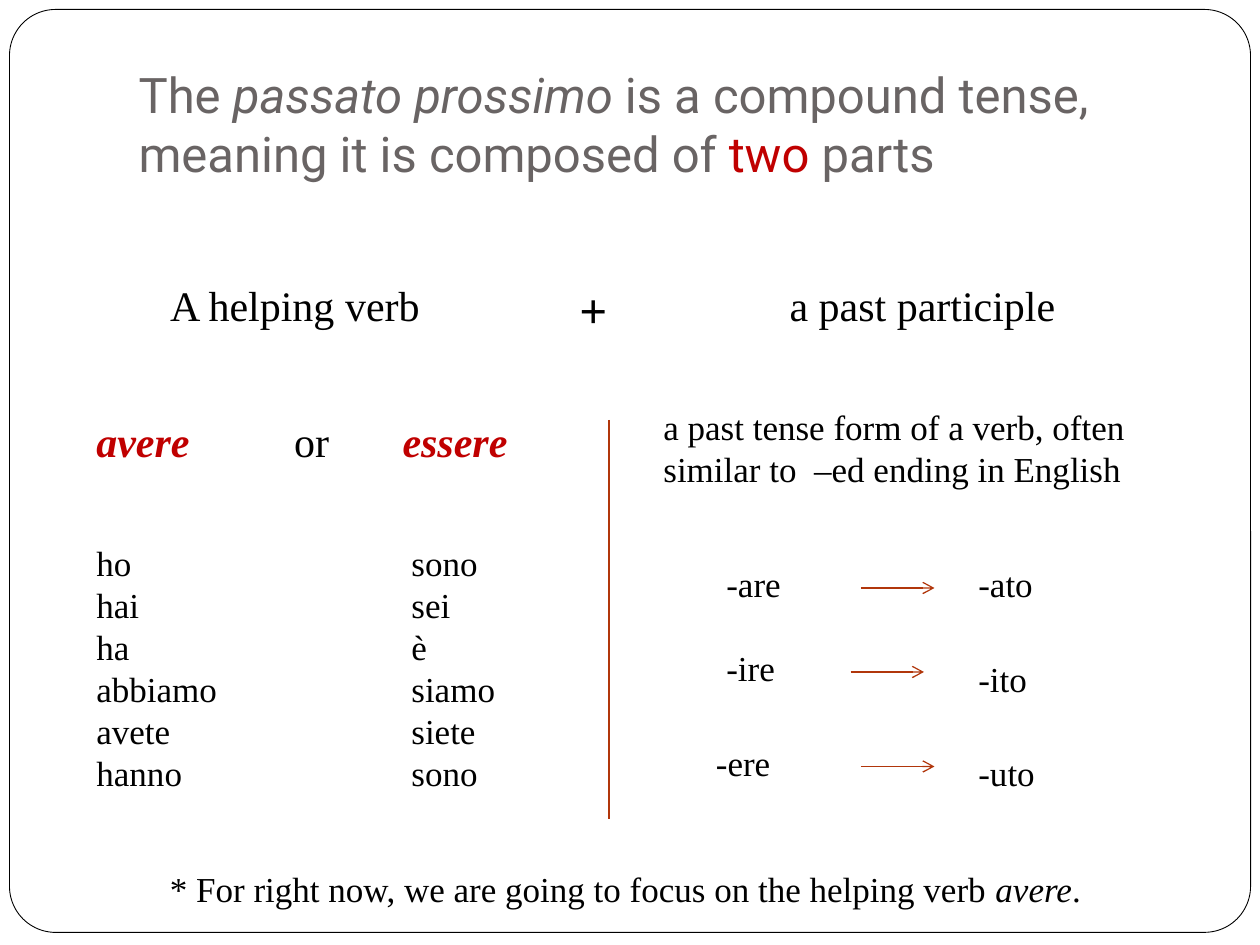
from typing import NamedTuple

from lxml import etree
from pptx import Presentation
from pptx.dml.color import RGBColor
from pptx.enum.shapes import MSO_CONNECTOR, MSO_SHAPE
from pptx.enum.text import MSO_ANCHOR, MSO_AUTO_SIZE, PP_ALIGN
from pptx.oxml.ns import qn
from pptx.util import Inches, Pt

STRAIGHT = MSO_CONNECTOR.STRAIGHT
ROUNDED = MSO_SHAPE.ROUNDED_RECTANGLE
TOP, BOTTOM = MSO_ANCHOR.TOP, MSO_ANCHOR.BOTTOM
GROW, FIXED = MSO_AUTO_SIZE.SHAPE_TO_FIT_TEXT, MSO_AUTO_SIZE.NONE
LEFT = PP_ALIGN.LEFT

WIDTH, HEIGHT = Inches(10), Inches(7.5)
COLS, ROWS = 120, 90
SERIF, SANS = "Times New Roman", "Roboto"
BLACK, WHITE, GREY, RED, RUST = "000000", "FFFFFF", "696464", "C00000", "B1360B"


class Run(NamedTuple):
    text: str
    color: str | None = None
    bold: bool | None = None
    italic: bool | None = None


class Box(NamedTuple):
    col: float
    row: float
    cols: float
    rows: float


class Style(NamedTuple):
    size: float = 20
    font: str = SERIF
    color: str = BLACK


class Ending(NamedTuple):
    infinitive: str
    participle: str
    left: Box
    right: Box
    arrow_col: float
    arrow_row: float


BODY = Style()
HEADING = Style(24)

FRAME = Box(0.9, 0.9, 118.2, 87.9)
TITLE = [Run("The "), Run("passato prossimo", italic=True),
         Run(" is a compound tense, meaning it is composed of "),
         Run("two", RED), Run(" parts")]
PARTS = [("A helping verb", Box(15, 26, 32, 8)),
         ("a past participle", Box(74, 26, 33, 8))]
VERBS = [Run("avere", RED, True, True), Run("\tor\t"),
         Run("essere", RED, True, True)]
VERB_TABS = (1.57, 2.43)
CONJUGATIONS = [
    (["ho", "hai", "ha", "abbiamo", "avete", "hanno"], Box(8, 51, 20, 25.5)),
    (["sono", "sei", "è", "siamo", "siete", "sono"], Box(38, 51, 16, 25.5)),
]
ENDINGS = [
    Ending("-are", "-ato", Box(68, 53, 12, 5.3), Box(92, 53, 12, 5.3), 82, 56),
    Ending("-ire", "-ito", Box(68, 61, 11, 5.3), Box(92, 62, 11, 5.3), 81, 64),
    Ending("-ere", "-uto", Box(67, 70, 11, 5.3), Box(92, 71, 13, 5.3), 82, 73),
]
ARROW_COLS = 7
NOTE = [Run("* For right now, we are going to focus on the helping verb "),
        Run("avere", italic=True), Run(".")]


def rgb(value: str) -> RGBColor:
    return RGBColor.from_string(value)


def x(cols: float) -> int:
    return round(WIDTH * cols / COLS)


def y(rows: float) -> int:
    return round(HEIGHT * rows / ROWS)


def place(sp, box: Box) -> None:
    sp.left, sp.top = x(box.col), y(box.row)
    sp.width, sp.height = x(box.cols), y(box.rows)


def write(tf, lines: list[list[Run]], style: Style) -> None:
    tf.word_wrap = True
    for i, runs in enumerate(lines):
        p = tf.add_paragraph() if i else tf.paragraphs[0]
        p.alignment = LEFT
        p.font.size = Pt(style.size)
        p.font.name = style.font
        p.font.color.rgb = rgb(style.color)
        for run in runs:
            r = p.add_run()
            r.text = run.text
            r.font.bold, r.font.italic = run.bold, run.italic
            if run.color:
                r.font.color.rgb = rgb(run.color)


def add_text(s, box: Box, lines: list[list[Run]], style: Style = BODY):
    sp = s.shapes.add_textbox(x(box.col), y(box.row), x(box.cols), y(box.rows))
    write(sp.text_frame, lines, style)
    sp.text_frame.auto_size = GROW
    return sp


def fill_placeholder(sp, box: Box, runs: list[Run], style: Style, anchor) -> None:
    place(sp, box)
    tf = sp.text_frame
    write(tf, [runs], style)
    tf.auto_size = FIXED
    tf.vertical_anchor = anchor


def remove_bullet(p) -> None:
    pPr = p._p.get_or_add_pPr()
    pPr.set("marL", "0")
    pPr.set("indent", "0")
    pPr.insert_element_before(etree.Element(qn("a:buNone")), "a:tabLst", "a:defRPr")


def set_tabs(p, stops: tuple[float, ...]) -> None:
    tabs = etree.Element(qn("a:tabLst"))
    for stop in stops:
        etree.SubElement(tabs, qn("a:tab"), pos=str(Inches(stop)), algn="l")
    p._p.get_or_add_pPr().insert_element_before(tabs, "a:defRPr")


def add_line(s, start: tuple[float, float], end: tuple[float, float],
             arrow: bool = False) -> None:
    line = s.shapes.add_connector(STRAIGHT, x(start[0]), y(start[1]),
                                  x(end[0]), y(end[1]))
    line.line.color.rgb = rgb(RUST)
    line.line.width = Pt(0.75)
    if arrow:
        etree.SubElement(line.line._get_or_add_ln(), qn("a:tailEnd"), type="arrow")
    etree.SubElement(line._element.spPr, qn("a:effectLst"))


def add_frame(s) -> None:
    sp = s.shapes.add_shape(ROUNDED, 0, 0, 0, 0)
    place(sp, FRAME)
    sp.adjustments[0] = 0.05
    sp.shadow.inherit = False
    sp.fill.solid()
    sp.fill.fore_color.rgb = rgb(WHITE)
    sp.line.color.rgb = rgb(BLACK)
    sp.line.width = Pt(0.5)
    s.shapes.title._element.addprevious(sp._element)


def main() -> None:
    prs = Presentation()
    prs.slide_width, prs.slide_height = WIDTH, HEIGHT
    s = prs.slides.add_slide(prs.slide_layouts[3])
    title, *bodies = s.placeholders
    add_frame(s)

    fill_placeholder(title, Box(12, 3.6, 102, 15), TITLE, Style(28, SANS, GREY), BOTTOM)
    title.text_frame.margin_bottom = Inches(0.1)
    for sp, (text, box) in zip(bodies, PARTS):
        fill_placeholder(sp, box, [Run(text)], HEADING, TOP)
        p = sp.text_frame.paragraphs[0]
        p.space_before = Pt(5.8)
        remove_bullet(p)

    add_text(s, Box(54, 26, 8, 6.8), [[Run("+", bold=True)]], Style(28))
    add_line(s, (58, 40), (58, 78))

    verbs = add_text(s, Box(8, 39, 47, 6), [VERBS], HEADING)
    set_tabs(verbs.text_frame.paragraphs[0], VERB_TABS)
    for forms, box in CONJUGATIONS:
        add_text(s, box, [[Run(form)] for form in forms])

    add_text(s, Box(62, 38, 56, 9.2),
             [[Run("a past tense form of a verb, often similar to  –ed ending in English")]])
    for e in ENDINGS:
        add_text(s, e.left, [[Run(e.infinitive)]])
        add_line(s, (e.arrow_col, e.arrow_row),
                 (e.arrow_col + ARROW_COLS, e.arrow_row), arrow=True)
        add_text(s, e.right, [[Run(e.participle)]])

    add_text(s, Box(15, 82, 95, 5.3), [NOTE])
    prs.save("out.pptx")


if __name__ == "__main__":
    main()
